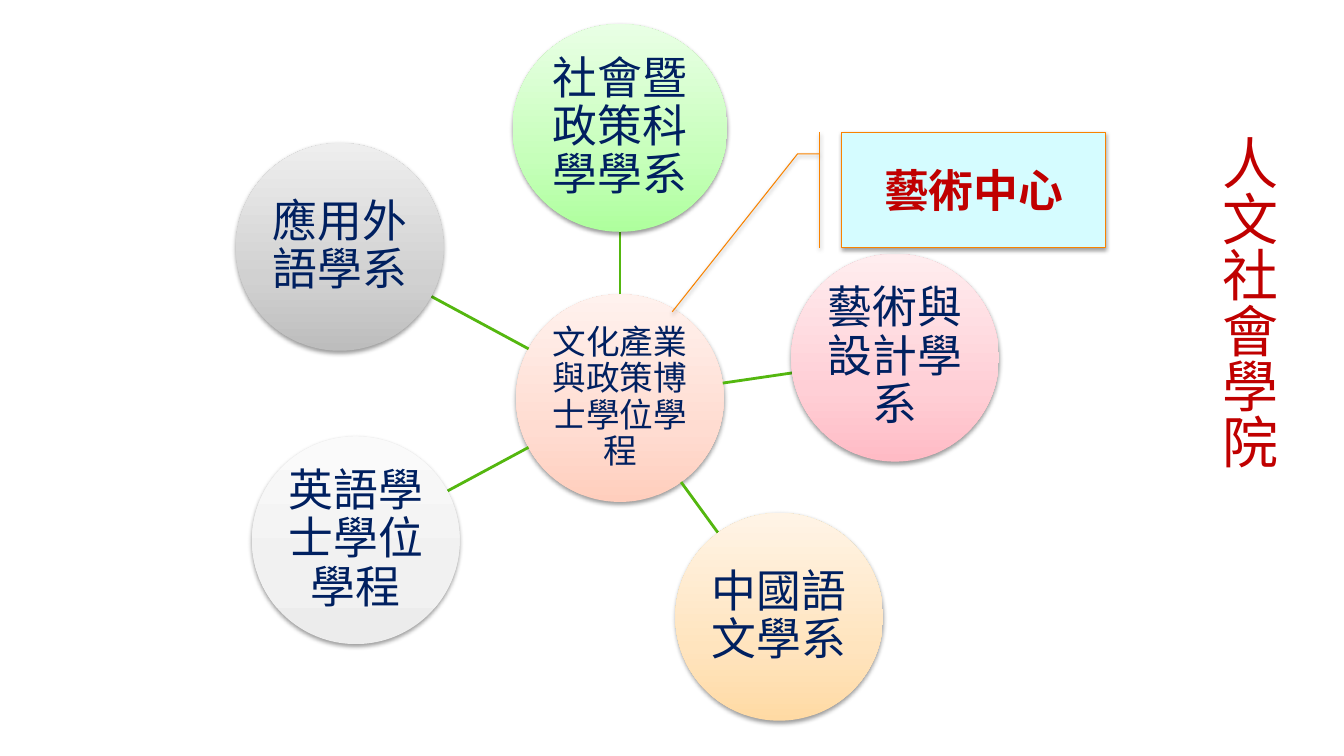
from copy import deepcopy
from math import hypot

from lxml.etree import SubElement
from pptx import Presentation
from pptx.dml.color import RGBColor
from pptx.enum.shapes import MSO_CONNECTOR, MSO_SHAPE
from pptx.enum.text import MSO_ANCHOR, MSO_AUTO_SIZE, PP_ALIGN
from pptx.oxml.ns import qn
from pptx.util import Inches, Pt

SLIDE_WIDTH = Inches(13.33)
SLIDE_HEIGHT = Inches(7.5)
COLUMN = SLIDE_WIDTH / 100
ROW = SLIDE_HEIGHT / 100
DIAMETER = Inches(2.06)
WIDE_DIAMETER = Inches(2.13)

NAVY = RGBColor(0x00, 0x20, 0x60)
RED = RGBColor(0xC0, 0x00, 0x00)
GREEN = RGBColor(0x54, 0xB7, 0x0F)
ORANGE = RGBColor(0xF9, 0x83, 0x00)
PALE_CYAN = RGBColor(0xD5, 0xFC, 0xFF)
PEACH = (RGBColor(0xFF, 0xCE, 0xBD), RGBColor(0xFF, 0xDC, 0xD1), RGBColor(0xFF, 0xF2, 0xEE))
LIME = (RGBColor(0xAE, 0xFF, 0x9D), RGBColor(0xC6, 0xFF, 0xBA), RGBColor(0xE9, 0xFF, 0xE5))
PINK = (RGBColor(0xFF, 0xBB, 0xC5), RGBColor(0xFF, 0xCF, 0xD6), RGBColor(0xFF, 0xED, 0xEF))
AMBER = (RGBColor(0xFF, 0xDA, 0xA4), RGBColor(0xFF, 0xE4, 0xBE), RGBColor(0xFF, 0xF4, 0xE6))
SILVER = (RGBColor(0xEC, 0xEC, 0xEC), RGBColor(0xF1, 0xF1, 0xF1), RGBColor(0xFA, 0xFA, 0xFA))
GREY = (RGBColor(0xBD, 0xBD, 0xBD), RGBColor(0xD1, 0xD1, 0xD1), RGBColor(0xEE, 0xEE, 0xEE))
GRADIENT_POSITIONS = (0, 0.35, 1)

FONT_NAME = "Noto Sans CJK SC"
HUB_FONT = {"size": Pt(24), "name": FONT_NAME}
DEPARTMENT_FONT = {"size": Pt(32), "name": FONT_NAME}
CENTER_FONT = {"size": Pt(32), "name": FONT_NAME, "bold": True}
TITLE_FONT = {"size": Pt(40), "name": FONT_NAME}
CIRCLE_FRAME = {
    "word_wrap": True,
    "vertical_anchor": MSO_ANCHOR.MIDDLE,
    "margin_left": Inches(0.02),
    "margin_right": Inches(0.02),
    "margin_top": Inches(0.02),
    "margin_bottom": Inches(0.02),
}
CENTER_FRAME = {"word_wrap": True, "vertical_anchor": MSO_ANCHOR.MIDDLE}
TITLE_FRAME = {"word_wrap": True, "auto_size": MSO_AUTO_SIZE.SHAPE_TO_FIT_TEXT}
CENTERED = {"alignment": PP_ALIGN.CENTER}
CIRCLE_PARAGRAPH = {"alignment": PP_ALIGN.CENTER, "line_spacing": 0.9}

HUB_TEXT = "文化產業與政策博士學位學程"
HUB_POINT = (46.13, 52.67)
DEPARTMENTS = (
    ("社會暨政策科學學系", (46.13, 16.93), WIDE_DIAMETER, LIME),
    ("藝術與設計學系", (66.6, 47.33), DIAMETER, PINK),
    ("中國語文學系", (57.98, 81.6), DIAMETER, AMBER),
    ("英語學士學位學程", (26.48, 71.47), DIAMETER, SILVER),
    ("應用外語學系", (25.28, 32.67), DIAMETER, GREY),
)
CALLOUT_ADJUSTMENTS = (0.188, -0.083, 0.188, -0.167, 1.552, -0.642)


def apply_format(target, values):
    for name, value in values.items():
        setattr(target, name, value)


def grid_box(left, top, width, height):
    return round(left * COLUMN), round(top * ROW), round(width * COLUMN), round(height * ROW)


def write_text(shape, text, color, font, frame, paragraph_format):
    apply_format(shape.text_frame, frame)
    paragraph = shape.text_frame.paragraphs[0]
    apply_format(paragraph, paragraph_format)
    run = paragraph.add_run()
    run.text = text
    apply_format(run.font, font)
    run.font.color.rgb = color
    east_asian = SubElement(run.font._element, qn("a:ea"))
    east_asian.set("typeface", FONT_NAME)
    run.font._element.find(qn("a:latin")).addnext(east_asian)


def add_shadow(shape):
    shape.shadow.inherit = False
    effects = shape._element.spPr.find(qn("a:effectLst"))
    shadow = SubElement(effects, qn("a:outerShdw"), {
        "blurRad": str(Pt(3.1)), "dist": str(Pt(1.6)), "dir": "5400000", "rotWithShape": "0",
    })
    color = SubElement(shadow, qn("a:srgbClr"), val="000000")
    SubElement(color, qn("a:alpha"), val="38000")


def fill_gradient(shape, colors):
    shape.fill.gradient()
    shape.fill.gradient_angle = 90
    stop_list = shape._element.spPr.find(".//" + qn("a:gsLst"))
    stop_list.append(deepcopy(stop_list[-1]))
    for stop, position, color in zip(shape.fill.gradient_stops, GRADIENT_POSITIONS, colors):
        stop.position = position
        stop.color.rgb = color


def add_circle(slide, text, point, width, colors, font):
    left = round(point[0] * COLUMN - width / 2)
    top = round(point[1] * ROW - DIAMETER / 2)
    shape = slide.shapes.add_shape(MSO_SHAPE.OVAL, left, top, width, DIAMETER)
    fill_gradient(shape, colors)
    shape.line.fill.background()
    add_shadow(shape)
    write_text(shape, text, NAVY, font, CIRCLE_FRAME, CIRCLE_PARAGRAPH)


def add_spoke(slide, hub, department):
    start_x, start_y = hub[0] * COLUMN, hub[1] * ROW
    end_x, end_y = department[0] * COLUMN, department[1] * ROW
    distance = hypot(end_x - start_x, end_y - start_y)
    step_x = (end_x - start_x) / distance * DIAMETER / 2
    step_y = (end_y - start_y) / distance * DIAMETER / 2
    connector = slide.shapes.add_connector(
        MSO_CONNECTOR.STRAIGHT,
        round(start_x + step_x), round(start_y + step_y),
        round(end_x - step_x), round(end_y - step_y),
    )
    connector.line.color.rgb = GREEN
    connector.line.width = Pt(2)
    SubElement(connector._element.spPr, qn("a:effectLst"))


def add_title(slide, text):
    shape = slide.shapes.add_textbox(*grid_box(89.18, 16.53, 6.6, 65.33))
    shape.text_frame._txBody.bodyPr.set("vert", "eaVert")
    write_text(shape, text, RED, TITLE_FONT, TITLE_FRAME, {})


def add_callout(slide, text):
    shape = slide.shapes.add_shape(
        MSO_SHAPE.LINE_CALLOUT_2_BORDER_AND_ACCENT_BAR, *grid_box(62.63, 17.47, 19.65, 15.33)
    )
    for index, value in enumerate(CALLOUT_ADJUSTMENTS):
        shape.adjustments[index] = value
    shape.fill.solid()
    shape.fill.fore_color.rgb = PALE_CYAN
    shape.line.color.rgb = ORANGE
    shape.line.width = Pt(0.75)
    add_shadow(shape)
    write_text(shape, text, RED, CENTER_FONT, CENTER_FRAME, CENTERED)


def main():
    presentation = Presentation()
    presentation.slide_width = SLIDE_WIDTH
    presentation.slide_height = SLIDE_HEIGHT
    slide = presentation.slides.add_slide(presentation.slide_layouts[6])
    add_circle(slide, HUB_TEXT, HUB_POINT, DIAMETER, PEACH, HUB_FONT)
    for text, point, width, colors in DEPARTMENTS:
        add_spoke(slide, HUB_POINT, point)
        add_circle(slide, text, point, width, colors, DEPARTMENT_FONT)
    add_title(slide, "人文社會學院")
    add_callout(slide, "藝術中心")
    presentation.save("out.pptx")


if __name__ == "__main__":
    main()
